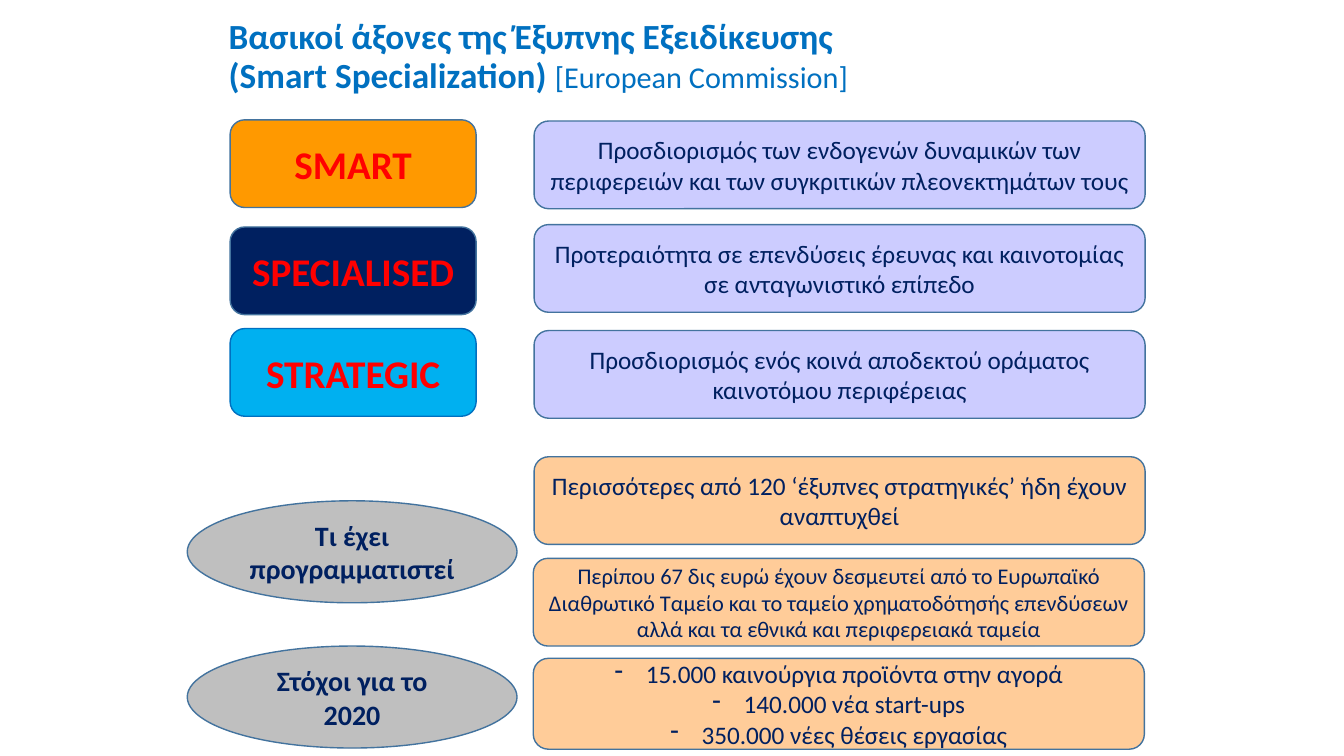
from lxml.etree import SubElement
from pptx import Presentation
from pptx.dml.color import RGBColor
from pptx.enum.shapes import MSO_SHAPE
from pptx.enum.text import MSO_ANCHOR, MSO_AUTO_SIZE, PP_ALIGN
from pptx.oxml.ns import qn
from pptx.util import Cm, Pt

NAVY, RED, BLUE, STEEL = "002060", "FF0000", "0070C0", "43739E"
LAVENDER, PEACH, GREY = "CCCCFF", "FFCC99", "BFBFBF"


def color(hex_string):
    return RGBColor.from_string(hex_string)


def add_box(kind, left, top, width, height, fill, lines, size,
            ink=NAVY, bold=False, outline=STEEL, dashed=False):
    box = slide.shapes.add_shape(kind, Cm(left), Cm(top), Cm(width), Cm(height))
    box.shadow.inherit = False
    box.fill.solid()
    box.fill.fore_color.rgb = color(fill)
    box.line.color.rgb = color(outline)
    box.line.width = Pt(1)
    frame = box.text_frame
    frame.word_wrap = True
    frame.vertical_anchor = MSO_ANCHOR.MIDDLE
    frame.text = "\n".join(lines)
    for paragraph in frame.paragraphs:
        paragraph.alignment = PP_ALIGN.CENTER
        if dashed:
            properties = paragraph._p.get_or_add_pPr()
            properties.set("marL", str(Cm(0.79)))
            properties.set("indent", str(-Cm(0.79)))
            SubElement(properties, qn("a:buFontTx"))
            SubElement(properties, qn("a:buChar"), char="-")
        paragraph.font.name = "Calibri"
        paragraph.font.size = Pt(size)
        paragraph.font.bold = bold
        paragraph.font.color.rgb = color(ink)


presentation = Presentation()
presentation.slide_width, presentation.slide_height = Cm(33.87), Cm(19.05)
slide = presentation.slides.add_slide(presentation.slide_layouts[5])

# Title
title = slide.shapes.title
title.left, title.top, title.width, title.height = Cm(5.51), Cm(0.33), Cm(22.86), Cm(2.24)
title.text_frame.word_wrap = True
title.text_frame.auto_size = MSO_AUTO_SIZE.NONE
title.text_frame.vertical_anchor = MSO_ANCHOR.MIDDLE
heading = title.text_frame.paragraphs[0]
heading.text = "Βασικοί άξονες της Έξυπνης Εξειδίκευσης\v(Smart Specialization) "
heading.add_run().text = "[European Commission]"
heading.alignment = PP_ALIGN.LEFT
heading.line_spacing = 0.9
heading.font.name = "Calibri"
heading.font.color.rgb = color(BLUE)
*main_runs, source_run = heading.runs
for run in heading.runs:
    run.font.size = Pt(25.2)
    run.font.bold = True
source_run.font.size = Pt(21.6)
source_run.font.bold = False

# Three axes, each with its explanation
axes = [
    ("SMART", 3.02, "FF9900", STEEL, 3.05,
     "Προσδιορισμός των ενδογενών δυναμικών των περιφερειών και των συγκριτικών πλεονεκτημάτων τους"),
    ("SPECIALISED", 5.72, NAVY, STEEL, 5.66,
     "Προτεραιότητα σε επενδύσεις έρευνας και καινοτομίας σε ανταγωνιστικό επίπεδο"),
    ("STRATEGIC", 8.28, "00B0F0", BLUE, 8.33,
     "Προσδιορισμός ενός κοινά αποδεκτού οράματος καινοτόμου περιφέρειας"),
]
for axis, axis_top, fill, outline, meaning_top, meaning in axes:
    add_box(MSO_SHAPE.ROUNDED_RECTANGLE, 5.8, axis_top, 6.2, 2.21, fill, [axis], 28,
            ink=RED, bold=True, outline=outline)
    add_box(MSO_SHAPE.ROUNDED_RECTANGLE, 13.46, meaning_top, 15.4, 2.21, LAVENDER, [meaning], 18)

# Plans and targets
for topic, top in [("Τι έχει προγραμματιστεί", 12.62), ("Στόχοι για το 2020", 16.28)]:
    add_box(MSO_SHAPE.OVAL, 4.72, top, 8.31, 2.57, GREY, [topic], 20, bold=True)

plans = [
    (13.46, 11.51, 18, "Περισσότερες από 120 ‘έξυπνες στρατηγικές’ ήδη έχουν αναπτυχθεί"),
    (13.44, 14.07, 16, "Περίπου 67 δις ευρώ έχουν δεσμευτεί από το Ευρωπαϊκό Διαθρωτικό Ταμείο "
                       "και το ταμείο χρηματοδότησής επενδύσεων αλλά και τα εθνικά και περιφερειακά ταμεία"),
]
for left, top, size, plan in plans:
    add_box(MSO_SHAPE.ROUNDED_RECTANGLE, left, top, 15.4, 2.21, PEACH, [plan], size)

targets = ["15.000 καινούργια προϊόντα στην αγορά", "140.000 νέα start-ups", "350.000 νέες θέσεις εργασίας"]
add_box(MSO_SHAPE.ROUNDED_RECTANGLE, 13.44, 16.59, 15.4, 2.29, PEACH, targets, 18, dashed=True)

presentation.save("out.pptx")
